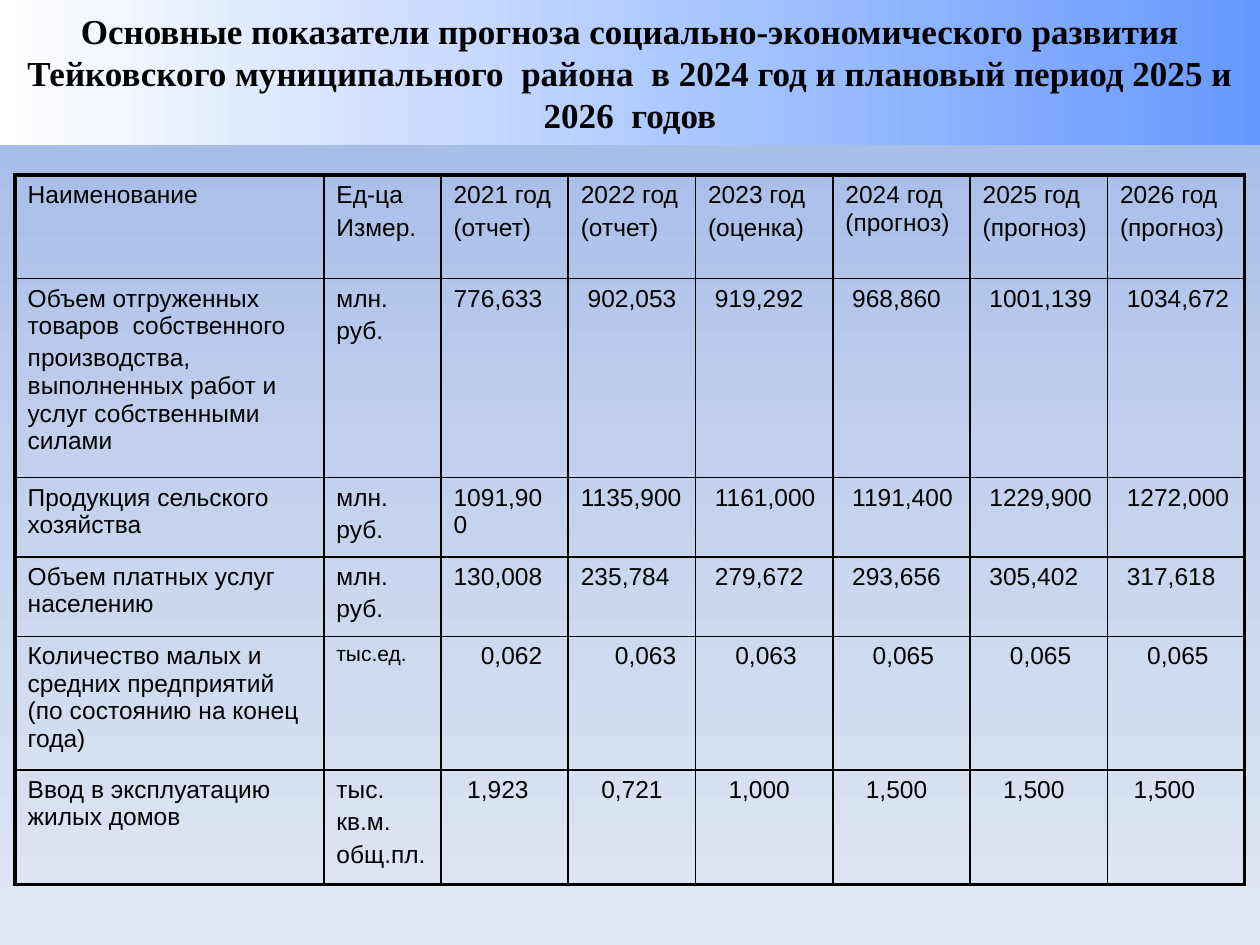
from lxml import etree
from pptx import Presentation
from pptx.dml.color import RGBColor
from pptx.enum.shapes import MSO_SHAPE
from pptx.enum.text import MSO_ANCHOR, PP_ALIGN
from pptx.oxml.ns import qn
from pptx.util import Inches, Pt

RECTANGLE = MSO_SHAPE.RECTANGLE
MIDDLE = MSO_ANCHOR.MIDDLE
CENTER, LEFT = PP_ALIGN.CENTER, PP_ALIGN.LEFT

COLORS = {
    "text": "000000", "border": "000000",
    "sky": "9AB5E4", "haze": "C2D1ED", "mist": "E1E8F5",
    "banner_start": "FFFFFF", "banner_end": "6699FF",
}
THICK, THIN = 2.25, 1
SPACE_WIDTH = 0.278  # share of the font size


def write_text(frame, text, font="Arial", size=14, bold=False, align=LEFT,
               before=0, indent=0):
    """Write one paragraph per line; before is a percentage of the line."""
    for index, line in enumerate(text.split("\n")):
        para = frame.paragraphs[0] if index == 0 else frame.add_paragraph()
        para.alignment = align
        properties = para._p.get_or_add_pPr()
        if indent:
            properties.set("marL", str(Pt(indent)))
        if before:
            spacing = etree.SubElement(properties, qn("a:spcBef"))
            etree.SubElement(spacing, qn("a:spcPct"), val=str(before * 1000))
        span = para.add_run()
        span.text = line
        span.font.name = font
        span.font.size = Pt(size)
        span.font.bold = bold
        span.font.color.rgb = RGBColor.from_string(COLORS["text"])


def paint_gradient(fill, element, names, angle):
    """Fill with evenly spaced colour stops."""
    fill.gradient()
    fill.gradient_angle = angle
    stops = element.find(".//" + qn("a:gsLst"))
    for stop in list(stops):
        stops.remove(stop)
    for index, name in enumerate(names):
        position = 100000 * index // (len(names) - 1)
        stop = etree.SubElement(stops, qn("a:gs"), pos=str(position))
        etree.SubElement(stop, qn("a:srgbClr"), val=COLORS[name])


deck = Presentation()
deck.slide_width, deck.slide_height = Inches(10), Inches(7.5)
page = deck.slides.add_slide(deck.slide_layouts[6])
paint_gradient(page.background.fill, page._element, ["sky", "haze", "mist"], 270)

# Title banner
banner = page.shapes.add_shape(RECTANGLE, 0, 0, deck.slide_width, Inches(1.15))
banner.shadow.inherit = False
banner.line.fill.background()
paint_gradient(banner.fill, banner._element, ["banner_start", "banner_end"], 0)
banner.text_frame.word_wrap = True
banner.text_frame.vertical_anchor = MIDDLE
write_text(
    banner.text_frame,
    "Основные показатели прогноза социально-экономического развития "
    "Тейковского муниципального  района  в 2024 год и плановый период "
    "2025 и 2026  годов",
    font="Times New Roman", size=20, bold=True, align=CENTER)

# Table contents
rows = [
    ["Наименование", "Ед-ца\nИзмер.", "2021 год\n(отчет)", "2022 год\n(отчет)",
     "2023 год\n(оценка)", "2024 год (прогноз)", "2025 год\n(прогноз)",
     "2026 год\n(прогноз)"],
    ["Объем отгруженных товаров  собственного\n"
     "производства, выполненных работ и услуг собственными силами",
     "млн.\nруб.", "776,633", "902,053", "919,292", "968,860", "1001,139",
     "1034,672"],
    ["Продукция сельского хозяйства", "млн.\nруб.", "1091,900", "1135,900",
     "1161,000", "1191,400", "1229,900", "1272,000"],
    ["Объем платных услуг населению", "млн.\nруб.", "130,008", "235,784",
     "279,672", "293,656", "305,402", "317,618"],
    ["Количество малых и средних предприятий (по состоянию на конец года)",
     "тыс.ед.", "0,062", "0,063", "0,063", "0,065", "0,065", "0,065"],
    ["Ввод в эксплуатацию жилых домов", "тыс.\nкв.м.\nобщ.пл.", "1,923",
     "0,721", "1,000", "1,500", "1,500", "1,500"],
]
# Left indent of each column, in widths of a space
indents = [
    [0] * 8,
    [0, 0, 0, 1, 1, 1, 1, 1],
    [0, 0, 0, 0, 1, 1, 1, 1],
    [0, 0, 0, 0, 1, 1, 1, 1],
    [0, 0, 4, 5, 4, 4, 4, 4],
    [0, 0, 2, 3, 3, 3, 3, 2],
]
column_widths = [2.45, 0.93] + [1.01] * 2 + [1.09] * 4
row_heights = [0.82, 1.58, 0.63, 0.63, 1.06, 0.91]

# Table grid
table_frame = page.shapes.add_table(
    len(rows), len(column_widths), Inches(0.12), Inches(1.39),
    Inches(sum(column_widths)), Inches(sum(row_heights)))
table = table_frame.table
table.first_row = table.horz_banding = False
for column, width in zip(table.columns, column_widths):
    column.width = Inches(width)
for row, height in zip(table.rows, row_heights):
    row.height = Inches(height)

# Table cells: thick outer frame, thin inner lines
last_row, last_column = len(rows) - 1, len(column_widths) - 1
for r, row in enumerate(rows):
    for c, text in enumerate(row):
        cell = table.cell(r, c)
        size = 12 if text == "тыс.ед." else 14
        write_text(cell.text_frame, text, size=size, before=20,
                   indent=indents[r][c] * SPACE_WIDTH * size)
        outer_sides = {"lnL": c == 0, "lnR": c == last_column,
                       "lnT": r == 0, "lnB": r == last_row}
        properties = cell._tc.get_or_add_tcPr()
        for side, is_outer in outer_sides.items():
            width = Pt(THICK if is_outer else THIN)
            line = etree.SubElement(properties, qn(f"a:{side}"), w=str(width))
            paint = etree.SubElement(line, qn("a:solidFill"))
            etree.SubElement(paint, qn("a:srgbClr"), val=COLORS["border"])
        cell.fill.background()

deck.save("out.pptx")
